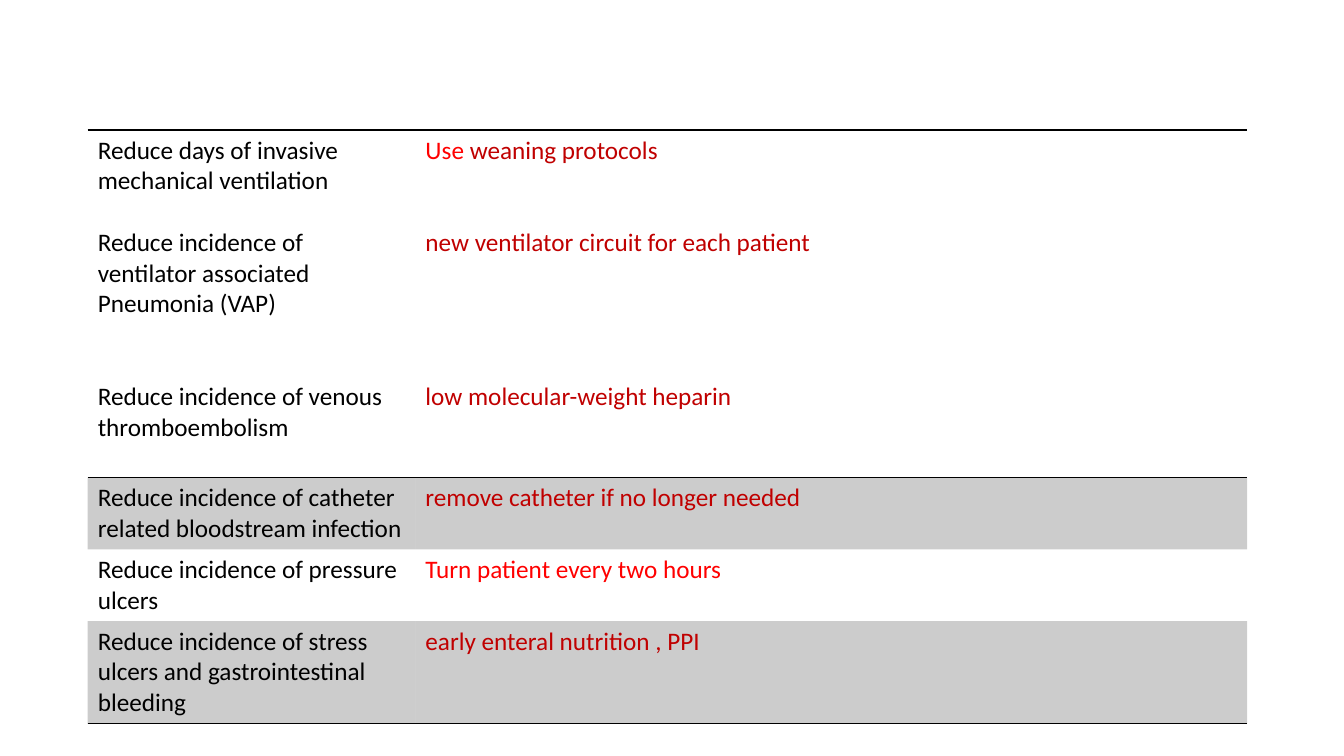
from lxml import etree
from pptx import Presentation
from pptx.dml.color import RGBColor
from pptx.oxml.ns import qn
from pptx.util import Inches, Pt

BLACK = RGBColor(0x00, 0x00, 0x00)
RED = RGBColor(0xFF, 0x00, 0x00)
DARK_RED = RGBColor(0xC0, 0x00, 0x00)
FONT = "Calibri"
TEXT_SIZE = Pt(18)
LINE_HEIGHT = 22
BAND_ALPHA = "20000"
RULE_WIDTH = Pt(1)
NO_STYLE = "{2D5ABB26-0587-4C30-8999-92F81FD0307C}"

# Each paragraph is (lines skipped above, runs).
CARE_GOALS = [
    {
        "height": 3.45, "banded": False, "rules": ["lnT", "lnB"],
        "goal": [
            (0, [("Reduce days of invasive", BLACK)]),
            (0, [("mechanical ventilation", BLACK)]),
            (1, [("Reduce incidence of ventilator associated", BLACK)]),
            (0, [("Pneumonia (VAP)", BLACK)]),
            (2, [("Reduce incidence of venous", BLACK)]),
            (0, [("thromboembolism", BLACK)]),
        ],
        "measure": [
            (0, [("Use ", RED), ("weaning protocols", DARK_RED)]),
            (2, [("new ventilator circuit for each patient", DARK_RED)]),
            (4, [("low molecular-weight heparin", DARK_RED)]),
        ],
    },
    {
        "height": 0.71, "banded": True, "rules": [],
        "goal": [(0, [("Reduce incidence of catheter related bloodstream infection", BLACK)])],
        "measure": [(0, [("remove catheter if no longer needed", DARK_RED)])],
    },
    {
        "height": 0.71, "banded": False, "rules": [],
        "goal": [
            (0, [("Reduce incidence of pressure", BLACK)]),
            (0, [("ulcers", BLACK)]),
        ],
        "measure": [(0, [("Turn patient every two hours", RED)])],
    },
    {
        "height": 1.02, "banded": True, "rules": ["lnB"],
        "goal": [(0, [("Reduce incidence of stress ulcers and gastrointestinal bleeding", BLACK)])],
        "measure": [(0, [("early enteral nutrition , PPI", DARK_RED)])],
    },
]
COLUMNS = [("goal", 3.25), ("measure", 8.25)]
LEFT, TOP = 0.87, 1.29


def write_paragraphs(cell, paragraphs):
    frame = cell.text_frame
    for index, (skipped, runs) in enumerate(paragraphs):
        paragraph = frame.add_paragraph() if index else frame.paragraphs[0]
        paragraph.space_before = Pt(skipped * LINE_HEIGHT)
        for text, color in runs:
            run = paragraph.add_run()
            run.text = text
            run.font.name = FONT
            run.font.size = TEXT_SIZE
            run.font.color.rgb = color


def paint_cell(cell, banded, rules):
    if banded:
        cell.fill.solid()
        cell.fill.fore_color.rgb = BLACK
    else:
        cell.fill.background()
    properties = cell._tc.get_or_add_tcPr()
    for color in properties.iter(qn("a:srgbClr")):
        etree.SubElement(color, qn("a:alpha"), val=BAND_ALPHA)
    for position, side in enumerate(rules):
        rule = etree.Element(qn(f"a:{side}"), w=str(int(RULE_WIDTH)))
        solid = etree.SubElement(rule, qn("a:solidFill"))
        etree.SubElement(solid, qn("a:srgbClr"), val=str(BLACK))
        properties.insert(position, rule)


def main():
    deck = Presentation()
    deck.slide_width = Inches(13.33)
    deck.slide_height = Inches(7.5)
    slide = deck.slides.add_slide(deck.slide_layouts[6])

    width = sum(column_width for _, column_width in COLUMNS)
    height = sum(row["height"] for row in CARE_GOALS)
    frame = slide.shapes.add_table(
        len(CARE_GOALS), len(COLUMNS),
        Inches(LEFT), Inches(TOP), Inches(width), Inches(height))
    care_table = frame.table
    care_table.first_row = False
    care_table.horz_banding = False
    care_table._tbl.tblPr.find(qn("a:tableStyleId")).text = NO_STYLE

    for column, (_, column_width) in enumerate(COLUMNS):
        care_table.columns[column].width = Inches(column_width)
    for row, care_goal in enumerate(CARE_GOALS):
        care_table.rows[row].height = Inches(care_goal["height"])
        for column, (part, _) in enumerate(COLUMNS):
            cell = care_table.cell(row, column)
            write_paragraphs(cell, care_goal[part])
            paint_cell(cell, care_goal["banded"], care_goal["rules"])

    deck.save("out.pptx")


if __name__ == "__main__":
    main()
